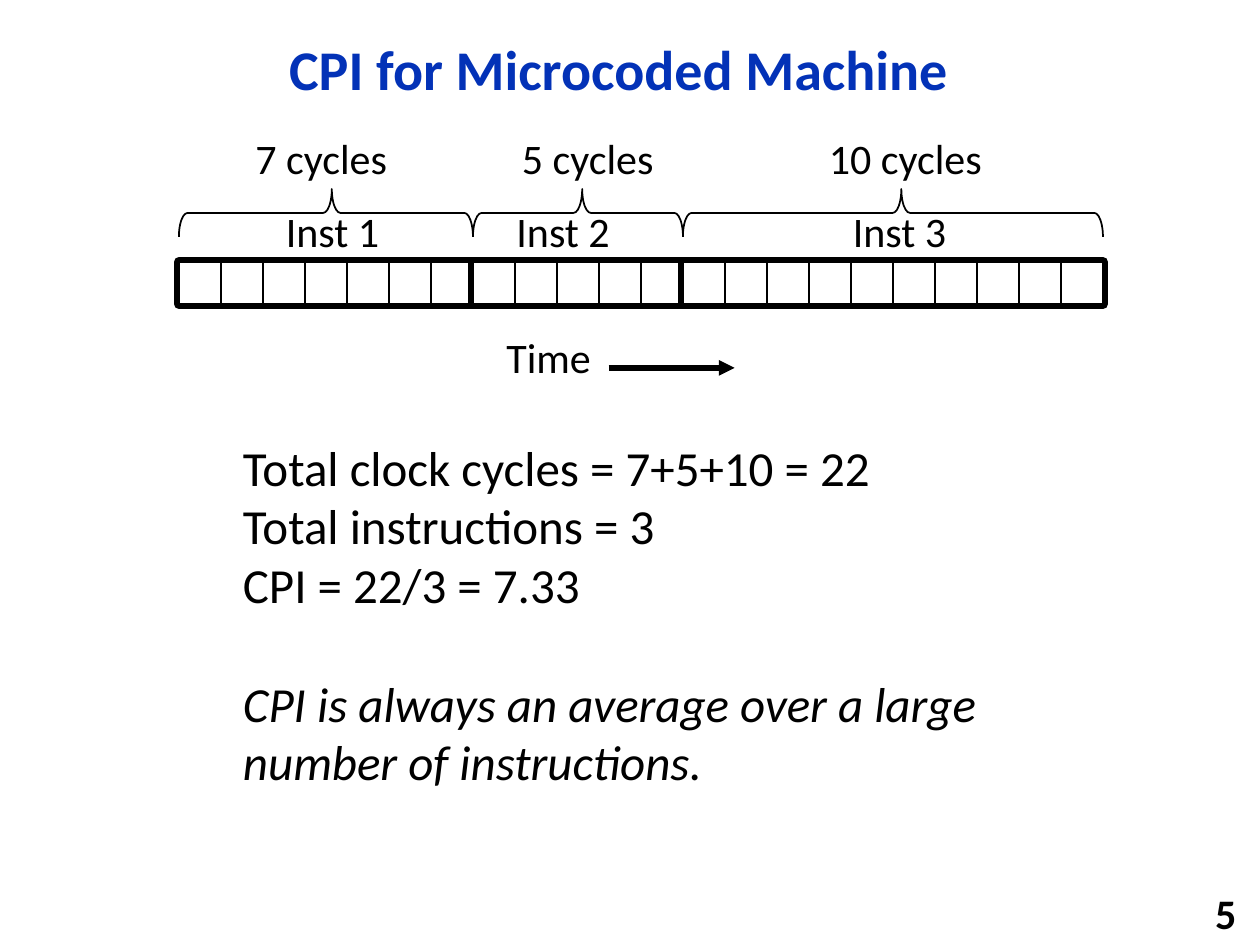
import pptx
import pptx.dml.color
import pptx.enum.shapes
import pptx.enum.text
import pptx.oxml
import pptx.oxml.ns
import pptx.util

Inches = pptx.util.Inches
Pt = pptx.util.Pt
Shapes = pptx.enum.shapes.MSO_SHAPE
Align = pptx.enum.text.PP_ALIGN
Anchor = pptx.enum.text.MSO_ANCHOR


def color(hex_code):
    return pptx.dml.color.RGBColor.from_string(hex_code)


class SlideBuilder:
    font_name = "Calibri"
    ink = "000000"
    paper = "FFFFFF"
    title_ink = "0332B7"

    def __init__(self, slide):
        self.slide = slide

    def shape(self, kind, left, top, width, height, line_width):
        outline = self.slide.shapes.add_shape(
            kind, Inches(left), Inches(top), Inches(width), Inches(height))
        outline.shadow.inherit = False
        outline.fill.solid()
        outline.fill.fore_color.rgb = color(self.paper)
        outline.line.color.rgb = color(self.ink)
        outline.line.width = Pt(line_width)
        return outline

    def box(self, left, top, width, height, line_width):
        return self.shape(Shapes.RECTANGLE, left, top, width, height, line_width)

    def brace(self, left, top, width, height):
        center_x = left + width / 2
        center_y = top + height / 2
        curve = self.shape(Shapes.LEFT_BRACE, center_x - height / 2,
                           center_y - width / 2, height, width, 1)
        curve.rotation = 90
        curve.adjustments[0] = 0.18
        curve.adjustments[1] = 0.48

    def text(self, lines, left, top, width, height, size=24, ink=None, bold=False,
             align=Align.LEFT, anchor=Anchor.TOP, wrap=False):
        frame = self.slide.shapes.add_textbox(
            Inches(left), Inches(top), Inches(width), Inches(height)).text_frame
        frame.word_wrap = wrap
        frame.vertical_anchor = anchor
        frame.text = "\n".join(lines)
        for paragraph in frame.paragraphs:
            paragraph.alignment = align
            paragraph.font.name = self.font_name
            paragraph.font.size = Pt(size)
            paragraph.font.bold = bold
            paragraph.font.color.rgb = color(ink or self.ink)
        return frame.paragraphs

    def arrow(self, start_x, end_x, y, line_width):
        connector = self.slide.shapes.add_connector(
            pptx.enum.shapes.MSO_CONNECTOR.STRAIGHT,
            Inches(start_x), Inches(y), Inches(end_x), Inches(y))
        connector.line.color.rgb = color(self.ink)
        connector.line.width = Pt(line_width)
        head = pptx.oxml.parse_xml(
            f'<a:tailEnd {pptx.oxml.ns.nsdecls("a")} type="triangle"/>')
        connector.line._get_or_add_ln().append(head)
        no_effects = pptx.oxml.parse_xml(
            f'<a:effectLst {pptx.oxml.ns.nsdecls("a")}/>')
        connector._element.spPr.append(no_effects)


def main():
    presentation = pptx.Presentation()
    presentation.slide_width = Inches(10)
    presentation.slide_height = Inches(7.5)
    builder = SlideBuilder(
        presentation.slides.add_slide(presentation.slide_layouts[6]))

    title = builder.text(["CPI for Microcoded Machine"], 0.92, 0.17, 7.98, 0.81,
                         size=32, ink=builder.title_ink, bold=True,
                         align=Align.CENTER, anchor=Anchor.MIDDLE, wrap=True)
    title[0].line_spacing = 0.9

    cycle = 1 / 3
    timeline_top = 2.08
    start = 1.42
    instructions = [
        ("Inst 1", 7, 2.17, 1.92, 1.26),
        ("Inst 2", 5, 4, 3.83, 1.67),
        ("Inst 3", 10, 6.67, 6.17, 2.03),
    ]
    for name, cycles, name_left, count_left, count_width in instructions:
        duration = cycles * cycle
        builder.brace(start, 1.5, duration, 0.38)
        builder.box(start, timeline_top, duration, cycle, 6)
        for index in range(cycles):
            builder.box(start + index * cycle, timeline_top, cycle, cycle, 1)
        builder.text([f"{cycles} cycles"], count_left, 1, count_width, 0.5,
                     align=Align.CENTER, wrap=True)
        builder.text([name], name_left, 1.58, 0.95, 0.5)
        start += duration

    builder.text(["Time"], 3.92, 2.58, 0.88, 0.5)
    builder.arrow(4.83, 5.83, 2.92, 3)

    summary = builder.text([
        "Total clock cycles = 7+5+10 = 22",
        "Total instructions = 3",
        "CPI = 22/3 = 7.33",
        "CPI is always an average over a large number of instructions.",
    ], 1.83, 3.42, 6.75, 2.93, size=28, wrap=True)
    summary[-1].font.italic = True
    summary[-1].space_before = Pt(34)

    builder.text(["5"], 7.83, 7.08, 2.08, 0.32, bold=True,
                 align=Align.RIGHT, anchor=Anchor.MIDDLE, wrap=True)

    presentation.save("out.pptx")


if __name__ == "__main__":
    main()
